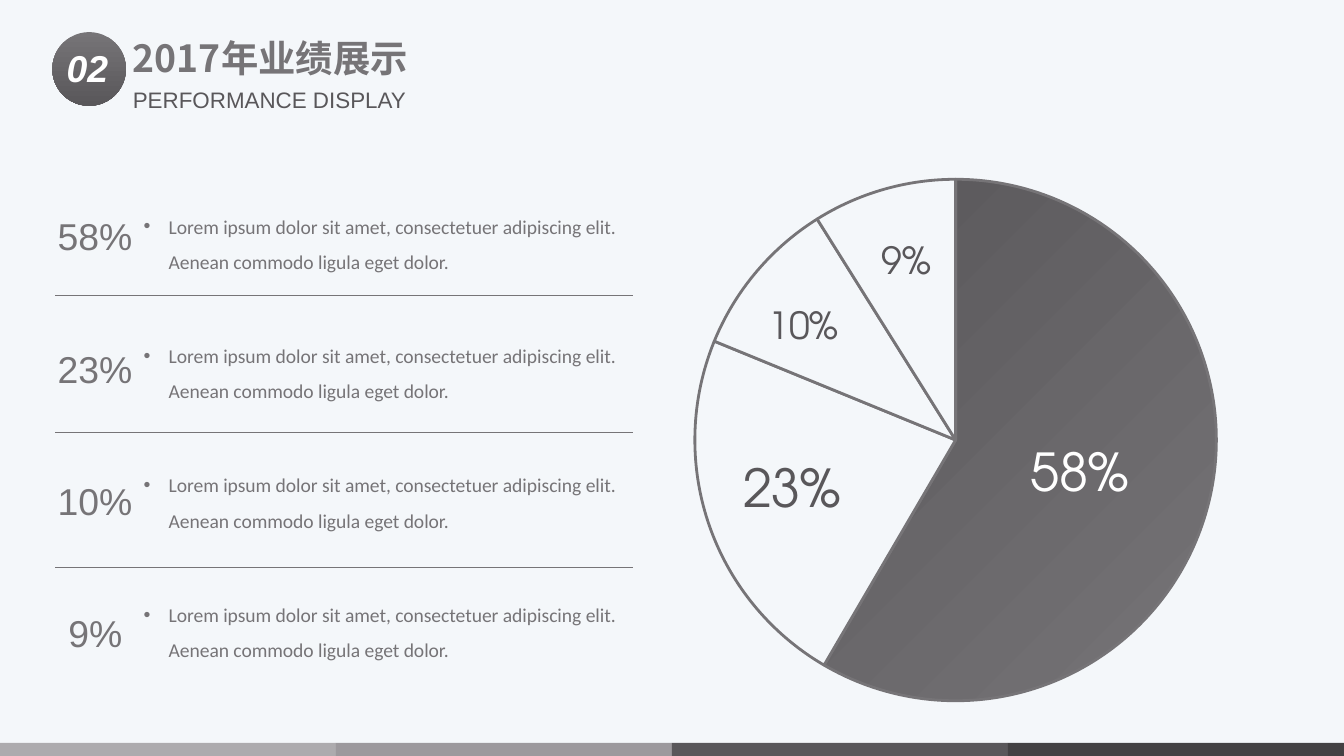
from typing import NamedTuple, Optional

from lxml.etree import SubElement
from pptx import Presentation
from pptx.chart.data import CategoryChartData
from pptx.dml.color import RGBColor
from pptx.dml.fill import FillFormat
from pptx.enum.chart import XL_CHART_TYPE
from pptx.enum.shapes import MSO_CONNECTOR, MSO_SHAPE
from pptx.enum.text import MSO_AUTO_SIZE, PP_ALIGN
from pptx.oxml import parse_xml
from pptx.oxml.ns import nsdecls, qn
from pptx.slide import Slide
from pptx.text.text import _Paragraph
from pptx.util import Pt

BLACK = RGBColor(0x00, 0x00, 0x00)
WHITE = RGBColor(0xFF, 0xFF, 0xFF)
GREY = RGBColor(0x76, 0x74, 0x77)
DARK = RGBColor(0x59, 0x57, 0x5A)
PALE = RGBColor(0xF4, 0xF7, 0xFA)
MIST = RGBColor(0xF2, 0xF6, 0xF9)
BANDS = [
    RGBColor(0xAD, 0xAB, 0xAE),
    RGBColor(0x9C, 0x99, 0x9D),
    DARK,
    RGBColor(0x43, 0x41, 0x43),
]
WIDE, HIGH = 720, 405
DOWN, SLANT = 270, 135
LOREM = (
    "Lorem ipsum dolor sit amet, consectetuer adipiscing elit. "
    "Aenean commodo ligula eget dolor."
)


class Label(NamedTuple):
    text: str
    left: float
    top: float
    width: float
    height: float
    size: float
    font: str = "Arial"
    color: Optional[RGBColor] = None
    bold: bool = False
    slope: bool = False
    wrap: bool = True
    center: bool = False


class Share(NamedTuple):
    text: str
    left: float
    width: float


HEADS = [
    Label("02", 20.2, 20.9, 53.3, 31.7, 20, color=WHITE, bold=True, slope=True, center=True),
    Label("2017年业绩展示", 64.1, 15.1, 246.2, 31.7, 20, "Noto Sans CJK SC", bold=True),
    Label("PERFORMANCE DISPLAY", 64.1, 42.5, 225.4, 21.6, 12, color=DARK),
]
ROUND = "TeX Gyre Adventor"
MARKS = [
    Label("10%", 404.6, 158.4, 52.6, 31.7, 20, ROUND, DARK, wrap=False),
    Label("9%", 465.1, 123.8, 41.8, 31.7, 20, ROUND, DARK, wrap=False),
    Label("58%", 545, 231.8, 67.7, 41, 28, ROUND, WHITE, wrap=False),
    Label("23%", 391, 240.5, 67.7, 41, 28, ROUND, DARK, wrap=False),
]
SHARES = [
    Share("58%", 23.8, 54.7),
    Share("23%", 23.8, 54.7),
    Share("10%", 23.8, 54.7),
    Share("9%", 29.5, 43.9),
]
RULES = [158.4, 231.8, 303.8]


def blend(fill: FillFormat, first: RGBColor, last: RGBColor, angle: float) -> None:
    fill.gradient()
    fill.gradient_angle = angle
    for stop, color in zip(fill.gradient_stops, (first, last)):
        stop.color.rgb = color


def write(slide: Slide, label: Label) -> _Paragraph:
    box = slide.shapes.add_textbox(
        Pt(label.left), Pt(label.top), Pt(label.width), Pt(label.height)
    )
    frame = box.text_frame
    frame.word_wrap = label.wrap
    frame.auto_size = MSO_AUTO_SIZE.SHAPE_TO_FIT_TEXT
    para = frame.paragraphs[0]
    if label.center:
        para.alignment = PP_ALIGN.CENTER
    run = para.add_run()
    run.text = label.text
    font = run.font
    font.size = Pt(label.size)
    font.bold = label.bold
    font.italic = label.slope
    if label.color is None:
        blend(font.fill, GREY, DARK, DOWN)
    else:
        font.color.rgb = label.color
    font.name = label.font
    SubElement(run._r.get_or_add_rPr(), qn("a:ea"), typeface=label.font)
    return para


def bullet(para: _Paragraph) -> None:
    para.line_spacing = 1.5
    props = para._p.get_or_add_pPr()
    props.set("marL", str(Pt(13.5)))
    props.set("indent", str(-Pt(13.5)))
    SubElement(props, qn("a:buFont"), typeface="Arial")
    SubElement(props, qn("a:buChar"), char="•")


def rule(slide: Slide, top: float) -> None:
    line = slide.shapes.add_connector(
        MSO_CONNECTOR.STRAIGHT, Pt(29.5), Pt(top), Pt(339.1), Pt(top)
    )
    line.line.color.rgb = GREY
    line.line.width = Pt(0.5)
    SubElement(line._element.spPr, qn("a:effectLst"))


def bands(slide: Slide) -> None:
    width = WIDE / len(BANDS)
    for i, color in enumerate(BANDS):
        band = slide.shapes.add_shape(
            MSO_SHAPE.RECTANGLE, Pt(i * width), Pt(398), Pt(width), Pt(7)
        )
        band.shadow.inherit = False
        band.fill.solid()
        band.fill.fore_color.rgb = color
        band.line.fill.background()


def badge(slide: Slide) -> None:
    disc = slide.shapes.add_shape(MSO_SHAPE.OVAL, Pt(28), Pt(17.2), Pt(39.5), Pt(39.5))
    disc.shadow.inherit = False
    blend(disc.fill, GREY, DARK, DOWN)
    disc.line.fill.background()


def pie(slide: Slide) -> None:
    data = CategoryChartData()
    data.categories = ["1", "2", "3", "4"]
    data.add_series("Series 1", (59, 23, 10, 9))
    chart = slide.shapes.add_chart(
        XL_CHART_TYPE.PIE, Pt(286.6), Pt(85.7), Pt(450.7), Pt(300.2), data
    ).chart
    chart.has_title = False
    chart.has_legend = False
    chart.font.name = "Calibri"
    chart.font.size = Pt(10)
    chart.font.color.rgb = BLACK
    plot = chart.plots[0]
    plot.vary_by_categories = True
    for i in range(4):
        form = plot.series[0].points[i].format
        first, last = (GREY, DARK) if i == 0 else (PALE, MIST)
        blend(form.fill, first, last, SLANT)
        form.line.color.rgb = GREY
        form.line.width = Pt(1.5)
    area = chart._chartSpace.chart.plotArea
    for old in area.findall(qn("c:layout")):
        area.remove(old)
    area.insert(0, parse_xml(
        f'<c:layout {nsdecls("c")}><c:manualLayout><c:layoutTarget val="inner"/>'
        '<c:xMode val="edge"/><c:yMode val="edge"/><c:x val="0.19"/><c:y val="0.03"/>'
        '<c:w val="0.62"/><c:h val="0.94"/></c:manualLayout></c:layout>'
    ))


def main() -> None:
    deck = Presentation()
    deck.slide_width, deck.slide_height = Pt(WIDE), Pt(HIGH)
    slide = deck.slides.add_slide(deck.slide_layouts[6])
    blend(slide.background.fill, PALE, MIST, SLANT)
    bands(slide)
    badge(slide)
    for head in HEADS:
        write(slide, head)
    pie(slide)
    for mark in MARKS:
        write(slide, mark)
    for i, share in enumerate(SHARES):
        note = Label(LOREM, 69.8, 105.1 + 69.3 * i, 274.3, 45.4, 10.5, "Calibri", GREY)
        bullet(write(slide, note))
        write(slide, Label(
            share.text, share.left, 110.9 + 70.8 * i, share.width, 31.7, 20, wrap=False
        ))
    for top in RULES:
        rule(slide, top)
    deck.save("out.pptx")


if __name__ == "__main__":
    main()
